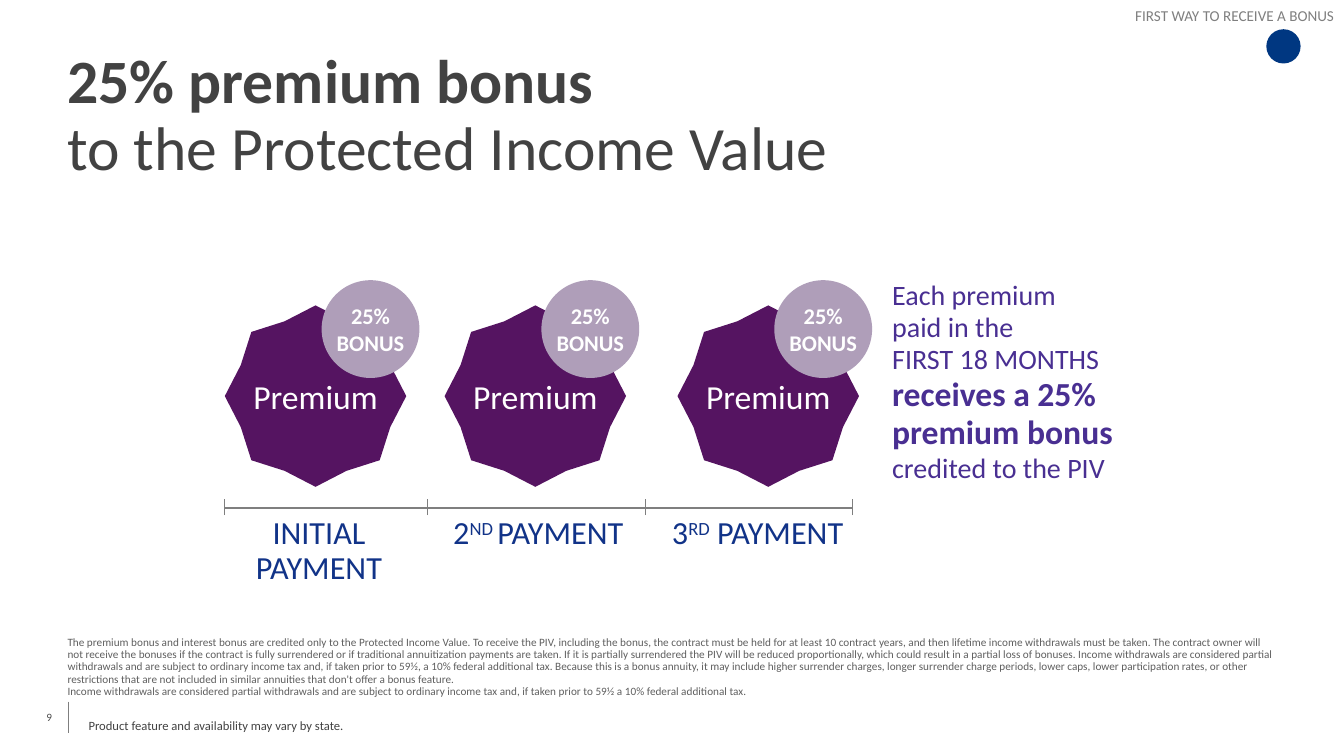
from lxml import etree
from pptx import Presentation
from pptx.dml.color import RGBColor
from pptx.enum.shapes import MSO_CONNECTOR, MSO_SHAPE
from pptx.enum.text import MSO_ANCHOR, PP_ALIGN
from pptx.oxml.ns import qn
from pptx.util import Inches, Pt

STAR, ELLIPSE = MSO_SHAPE.STAR_8_POINT, MSO_SHAPE.OVAL
STRAIGHT = MSO_CONNECTOR.STRAIGHT
LEFT, CENTER, RIGHT = PP_ALIGN.LEFT, PP_ALIGN.CENTER, PP_ALIGN.RIGHT
TOP, MIDDLE, BOTTOM = MSO_ANCHOR.TOP, MSO_ANCHOR.MIDDLE, MSO_ANCHOR.BOTTOM

FONT = "Calibri"
WHITE, DARK, GREY = "FFFFFF", "424242", "7F7F7F"
PLUM, LILAC, VIOLET, BLUE = "551461", "AF9EB9", "492F92", "113388"
FLAT, INSET, LABEL_INSET = (0, 0, 0, 0), (0.1, 0.05, 0.1, 0.05), (0, 0.05, 0, 0.05)

BONUS_TERMS = (
    "The premium bonus and interest bonus are credited only to the Protected Income Value.",
    "To receive the PIV, including the bonus, the contract must be held for at least 10 contract "
    "years, and then lifetime income withdrawals must be taken.",
    "The contract owner will not receive the bonuses if the contract is fully surrendered or if "
    "traditional annuitization payments are taken.",
    "If it is partially surrendered the PIV will be reduced proportionally, which could result in "
    "a partial loss of bonuses.",
    "Income withdrawals are considered partial withdrawals and are subject to ordinary income tax "
    "and, if taken prior to 59½, a 10% federal additional tax.",
    "Because this is a bonus annuity, it may include higher surrender charges, longer surrender "
    "charge periods, lower caps, lower participation rates, or other restrictions that are not "
    "included in similar annuities that don't offer a bonus feature.",
)
TAX_NOTE = (
    "Income withdrawals are considered partial withdrawals and are subject to ordinary income tax "
    "and, if taken prior to 59½ a 10% federal additional tax."
)


def rgb(value):
    return RGBColor.from_string(value)


class BonusSlide:
    def __init__(self, slide):
        self.slide = slide

    def style(self, run, size, color, bold=False):
        run.font.name = FONT
        run.font.size = Pt(size)
        run.font.color.rgb = rgb(color)
        run.font.bold = bold

    def fill_text(self, frame, text, size, color, bold=False, align=LEFT,
                  anchor=TOP, insets=FLAT, spacing=1.0):
        frame.word_wrap = True
        frame.vertical_anchor = anchor
        frame.margin_left, frame.margin_top, frame.margin_right, frame.margin_bottom = map(Inches, insets)
        frame.text = text
        for paragraph in frame.paragraphs:
            paragraph.alignment = align
            paragraph.line_spacing = spacing
            for run in paragraph.runs:
                self.style(run, size, color, bold)

    def text(self, box, text, size, color, **options):
        frame = self.slide.shapes.add_textbox(*map(Inches, box)).text_frame
        self.fill_text(frame, text, size, color, **options)
        return frame.paragraphs[0]

    def append(self, paragraph, text, size, color, raised=False):
        run = paragraph.add_run()
        run.text = text
        self.style(run, size, color)
        if raised:
            run.font._element.set("baseline", "30000")

    def shape(self, shapes, kind, box, fill):
        shape = shapes.add_shape(kind, *map(Inches, box))
        shape.shadow.inherit = False
        shape.fill.solid()
        shape.fill.fore_color.rgb = rgb(fill)
        shape.line.fill.background()
        return shape

    def line(self, x1, y1, x2, y2):
        line = self.slide.shapes.add_connector(STRAIGHT, *map(Inches, (x1, y1, x2, y2)))
        line.line.color.rgb = rgb(GREY)
        line.line.width = Pt(0.75)
        etree.SubElement(line._element.spPr, qn("a:effectLst"))

    def premium(self, left):
        shapes = self.slide.shapes.add_group_shape().shapes
        star = self.shape(shapes, STAR, (left, 3.03, 1.8, 1.8), PLUM)
        star.adjustments[0] = 0.446
        self.fill_text(star.text_frame, "Premium", 24, WHITE, align=CENTER, anchor=MIDDLE)
        bonus = self.shape(shapes, ELLIPSE, (left + 0.96, 2.78, 0.97, 0.97), LILAC)
        self.fill_text(bonus.text_frame, "25%\vBONUS", 16, WHITE, bold=True,
                       align=CENTER, anchor=MIDDLE)

    def payment(self, left, start, ordinal="", rest=""):
        label = self.text((left, 5.08, 1.87, 0.33), start, 23, BLUE, align=CENTER,
                          insets=LABEL_INSET, spacing=0.9)
        if ordinal:
            self.append(label, ordinal, 23, BLUE, raised=True)
            self.append(label, rest, 23, BLUE)


def main():
    deck = Presentation()
    deck.slide_width, deck.slide_height = Inches(13.33), Inches(7.5)
    page = BonusSlide(deck.slides.add_slide(deck.slide_layouts[6]))

    page.shape(page.slide.shapes, ELLIPSE, (12.56, 0.29, 0.34, 0.34), "003781")
    page.line(0.68, 6.96, 0.68, 7.27)

    title = page.text((0.67, 0.5, 12, 0.89), "25% premium bonus \vto the Protected Income Value",
                      44, DARK, spacing=0.9)
    title.runs[0].font.bold = True
    page.text((6.66, 0, 6.67, 0.25), "FIRST WAY TO RECEIVE A BONUS", 10.8, GREY, align=RIGHT,
              anchor=MIDDLE, insets=(0.1, 0.1, 0.1, 0), spacing=0.8)

    for left in (2.23, 4.41, 6.72):
        page.premium(left)

    page.line(2.23, 5.04, 8.45, 5.04)
    for tick in (2.23, 4.24, 6.4, 8.46):
        page.line(tick, 5.11, tick, 4.95)
    payments = (("INITIAL PAYMENT",), ("2", "ND ", "PAYMENT"), ("3", "RD", " PAYMENT"))
    for index, payment in enumerate(payments):
        page.payment(2.23 + index * 2.175, *payment)

    callout = page.text(
        (8.75, 2.73, 2.62, 2.33),
        "Each premium \vpaid in the \vFIRST 18 MONTHS\vreceives a 25% premium bonus ",
        20, VIOLET, insets=INSET, spacing=0.95)
    page.style(callout.runs[-1], 24, VIOLET, bold=True)
    page.append(callout, "credited to the PIV", 20, VIOLET)

    disclosure = "\n".join((" ".join(BONUS_TERMS), TAX_NOTE))
    page.text((0.67, 6.33, 12, 0.59), disclosure, 8, "5F5F5F", anchor=BOTTOM, spacing=0.9)
    page.text((0.46, 6.91, 0.42, 0.4), "9", 8, "4D4D4D", anchor=MIDDLE,
              insets=(0, 0.06, 0, 0.06))
    page.text((0.78, 7.09, 3.4, 0.25), "Product feature and availability may vary by state.",
              9, DARK, insets=INSET, spacing=0.9)

    deck.save("out.pptx")


if __name__ == "__main__":
    main()
